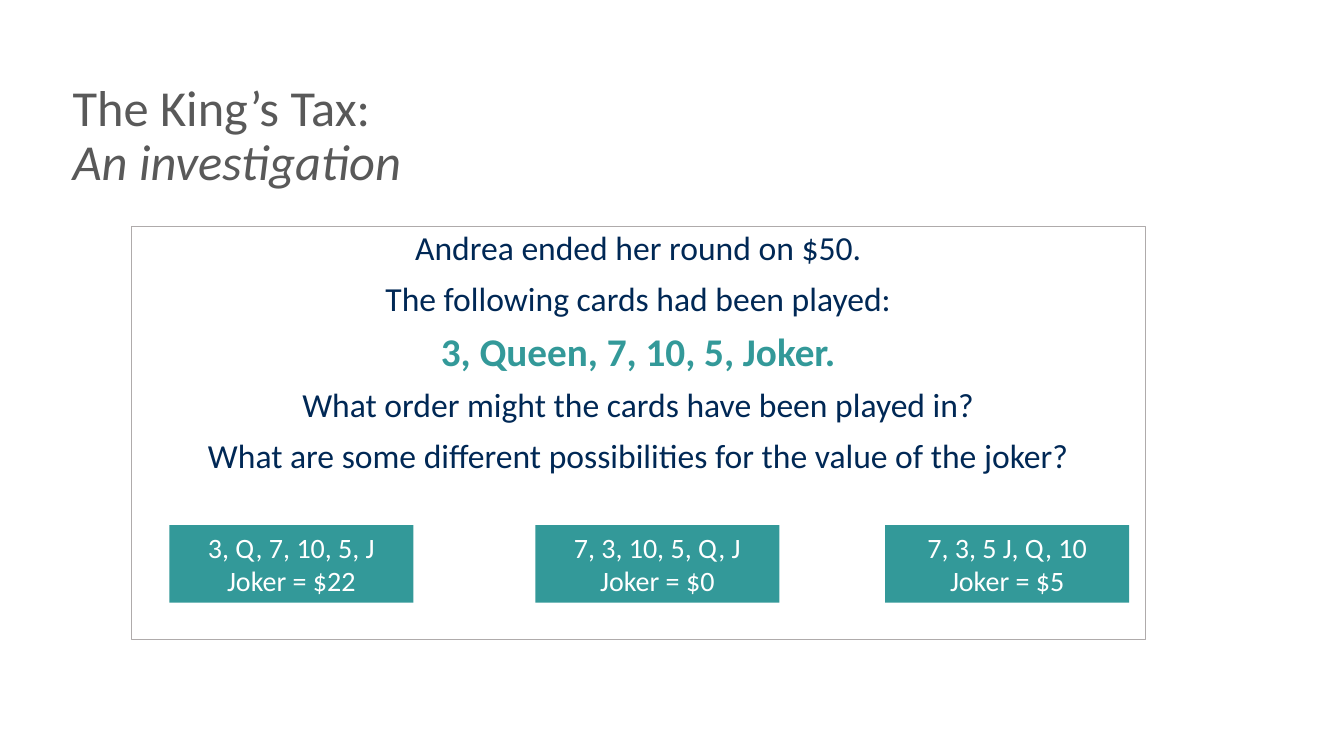
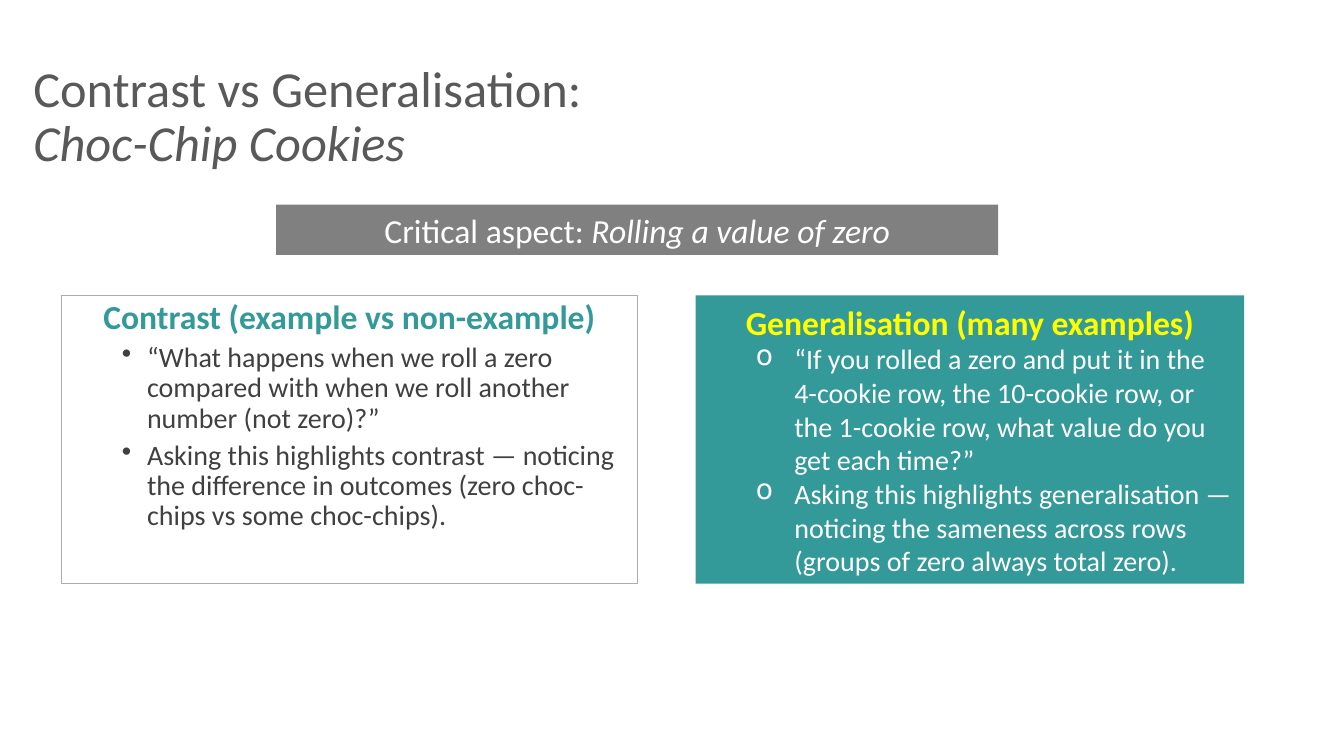
from lxml import etree
from pptx import Presentation
from pptx.dml.color import RGBColor
from pptx.enum.shapes import MSO_SHAPE
from pptx.enum.text import MSO_ANCHOR, PP_ALIGN
from pptx.oxml.ns import qn
from pptx.util import Emu, Pt

RECTANGLE = MSO_SHAPE.RECTANGLE
TOP, MIDDLE = MSO_ANCHOR.TOP, MSO_ANCHOR.MIDDLE
LEFT, CENTER = PP_ALIGN.LEFT, PP_ALIGN.CENTER

PX = 9144  # 100 px to the inch
FONT = "Calibri"
TEAL, WHITE, NAVY = "339999", "FFFFFF", "002855"
GREY, TITLE_GREY, BORDER = "808080", "595959", "AFABAB"

# Paragraph styles: size, colour, then optional values
TIGHT = {"line_spacing": 0.9}
STYLES = {
    "title": {"size": 36, "color": TITLE_GREY, "align": LEFT, **TIGHT},
    "question": {"size": 24, "color": NAVY, "before": 10, **TIGHT},
    "cards": {"size": 28, "color": TEAL, "bold": True, "before": 10, **TIGHT},
    "answer": {"size": 20, "color": WHITE},
    "banner": {"size": 24, "color": WHITE},
    "contrast head": {"size": 24, "color": TEAL, "bold": True, **TIGHT},
    "contrast": {"size": 20, "color": "404040", "align": LEFT, "before": 5,
                 "bullet": ("•", 75, -25), **TIGHT},
    "general head": {"size": 24, "color": "FFFF00", "bold": True},
    "general": {"size": 20, "color": WHITE, "align": LEFT,
                "bullet": ("o", 88, -38)},
}

# Content: a paragraph is (style, text, optional italic text)
ANSWERS = [
    (168, "3, Q, 7, 10, 5, J", "Joker = $22"),
    (531, "7, 3, 10, 5, Q, J", "Joker = $0"),
    (878, "7, 3, 5 J, Q, 10", "Joker = $5"),
]
SLIDES = [
    {
        "title": ("The King’s Tax:", "An investigation"),
        "title_box": (62, 77, 347, 145),
        "panels": [
            {"box": (130, 225, 1006, 409), "fill": WHITE, "border": BORDER,
             "text": [
                 ("question", "Andrea ended her round on $50."),
                 ("question", "The following cards had been played:"),
                 ("cards", "3, Queen, 7, 10, 5, Joker."),
                 ("question", "What order might the cards have been played in?"),
                 ("question", "What are some different possibilities for the "
                              "value of the joker?"),
             ]},
        ] + [
            {"box": (left, 521, 242, 77), "fill": TEAL, "anchor": MIDDLE,
             "text": [("answer", order), ("answer", joker)]}
            for left, order, joker in ANSWERS
        ],
    },
    {
        "title": ("Contrast vs Generalisation:", "Choc-Chip Cookies"),
        "title_box": (23, 58, 608, 145),
        "panels": [
            {"box": (61, 293, 571, 286), "fill": WHITE, "border": BORDER,
             "text": [
                 ("contrast head", "Contrast (example vs non-example)"),
                 ("contrast", "“What happens when we roll a zero compared with "
                              "when we roll another number (not zero)?”"),
                 ("contrast", "Asking this highlights contrast — noticing the "
                              "difference in outcomes (zero choc-chips vs some "
                              "choc-chips)."),
             ]},
            {"box": (690, 293, 544, 286), "fill": TEAL, "anchor": MIDDLE,
             "text": [
                 ("general head", "Generalisation (many examples)"),
                 ("general", "“If you rolled a zero and put it in the 4-cookie "
                             "row, the 10-cookie row, or the 1-cookie row, what "
                             "value do you get each time?”"),
                 ("general", "Asking this highlights generalisation — noticing "
                             "the sameness across rows (groups of zero always "
                             "total zero)."),
             ]},
            {"box": (274, 203, 716, 50), "fill": GREY, "anchor": MIDDLE,
             "text": [("banner", "Critical aspect: ", "Rolling a value of zero")]},
        ],
    },
]


def rgb(value):
    return RGBColor.from_string(value)


def emu(box):
    return [Emu(length * PX) for length in box]


def add_bullet(paragraph, character, margin, indent):
    paragraph.level = 1
    properties = paragraph._p.get_or_add_pPr()
    properties.set("marL", str(margin * PX))
    properties.set("indent", str(indent * PX))
    etree.SubElement(properties, qn("a:buChar")).set("char", character)


def format_paragraph(paragraph, style, first):
    if "bullet" in style:
        add_bullet(paragraph, *style["bullet"])
    values = {
        "alignment": style.get("align", CENTER),
        "line_spacing": style.get("line_spacing", 1.0),
        "space_before": Pt(0 if first else style.get("before", 0)),
    }
    for name, value in values.items():
        setattr(paragraph, name, value)


def add_run(paragraph, text, style, italic=False):
    run = paragraph.add_run()
    run.text = text
    values = {"name": FONT, "size": Pt(style["size"]),
              "bold": style.get("bold", False), "italic": italic}
    for name, value in values.items():
        setattr(run.font, name, value)
    run.font.color.rgb = rgb(style["color"])


def add_title(slide, lines, box):
    title = slide.shapes.title
    title.left, title.top, title.width, title.height = emu(box)
    frame = title.text_frame
    frame.word_wrap, frame.vertical_anchor = True, TOP
    paragraph = frame.paragraphs[0]
    format_paragraph(paragraph, STYLES["title"], True)
    add_run(paragraph, lines[0], STYLES["title"])
    paragraph.add_line_break()
    add_run(paragraph, lines[1], STYLES["title"], italic=True)


def add_panel(slide, panel):
    shape = slide.shapes.add_shape(RECTANGLE, *emu(panel["box"]))
    shape.shadow.inherit = False
    shape.fill.solid()
    shape.fill.fore_color.rgb = rgb(panel["fill"])
    if "border" in panel:
        shape.line.color.rgb = rgb(panel["border"])
        shape.line.width = Pt(0.75)
    else:
        shape.line.fill.background()
    frame = shape.text_frame
    frame.word_wrap = True
    frame.vertical_anchor = panel.get("anchor", TOP)
    for index, (style_name, text, *italic_text) in enumerate(panel["text"]):
        paragraph = frame.add_paragraph() if index else frame.paragraphs[0]
        style = STYLES[style_name]
        format_paragraph(paragraph, style, index == 0)
        add_run(paragraph, text, style)
        for tail in italic_text:
            add_run(paragraph, tail, style, italic=True)


def main():
    presentation = Presentation()
    presentation.slide_width, presentation.slide_height = emu((1333, 750))
    title_only = presentation.slide_layouts[5]
    for content in SLIDES:
        slide = presentation.slides.add_slide(title_only)
        add_title(slide, content["title"], content["title_box"])
        for panel in content["panels"]:
            add_panel(slide, panel)
    presentation.save("out.pptx")


if __name__ == "__main__":
    main()
